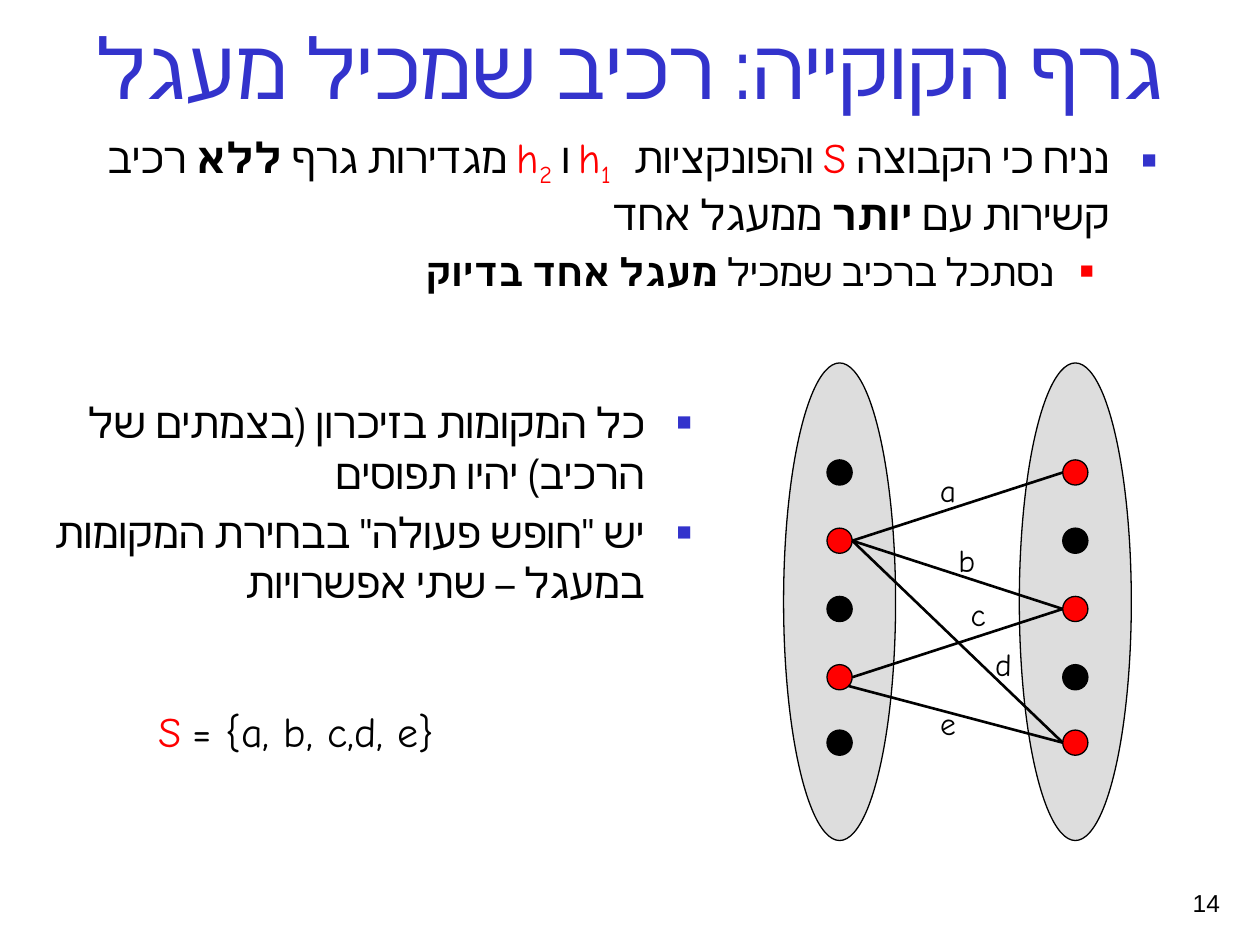
from lxml import etree
from pptx import Presentation
from pptx.dml.color import RGBColor
from pptx.enum import shapes, text
from pptx.oxml import ns
from pptx.util import Pt

BLUE = RGBColor(0x33, 0x33, 0xCC)
RED = RGBColor(0xFF, 0x00, 0x00)
BLACK = RGBColor(0x00, 0x00, 0x00)
GRAY = RGBColor(0xDD, 0xDD, 0xDD)
HEBREW, LATIN = "Arial Narrow", "Comic Neue"

PLAIN = {"name": HEBREW, "size": 24, "color": BLACK}
BOLD = {**PLAIN, "bold": True}
SYMBOL = {"name": LATIN, "size": 24, "color": RED}
SUBSCRIPT = {**SYMBOL, "baseline": -25000}
SMALL = {**PLAIN, "size": 22}
LABEL = {"name": LATIN, "size": 18, "color": BLACK}

ASSUMPTIONS = [
    (0, [("נניח כי הקבוצה ", PLAIN), ("S", SYMBOL), (" והפונקציות ", PLAIN),
         (" h", SYMBOL), ("1 ", SUBSCRIPT), ("ו ", PLAIN), ("h", SYMBOL),
         ("2", SUBSCRIPT), (" מגדירות גרף ", PLAIN), ("ללא", BOLD),
         (" רכיב קשירות עם ", PLAIN), ("יותר", BOLD), (" ממעגל אחד ", PLAIN)]),
    (1, [("נסתכל ברכיב שמכיל ", SMALL), ("מעגל אחד בדיוק", {**SMALL, "bold": True})]),
]
CONCLUSIONS = [
    (0, [("כל המקומות בזיכרון (בצמתים של הרכיב) יהיו תפוסים", PLAIN)]),
    (0, [('יש "חופש פעולה" בבחירת המקומות במעגל – שתי אפשרויות', PLAIN)]),
]
LEVELS = [(27, -27, BLUE), (58.5, -22.5, RED)]

DOT = 14.4
DOT_TOPS = [55.4, 94.4, 133.4, 172.4, 209.8]
LEFT_USED, RIGHT_USED = {1, 3}, {0, 2, 4}
EDGES = [(1, 2, 0, 0), (1, 0, 0, 0), (3, 2, 0, 0), (1, 4, 0, 0), (3, 4, -2.2, 5)]
EDGE_LABELS = [("a", 59, 57.6), ("b", 69.8, 97.9), ("d", 90.7, 157),
               ("c", 76.3, 128.9), ("e", 59, 190.8)]


def place(shape, box):
    """Set a shape's left, top, width and height from a box in points."""
    for name, value in zip(("left", "top", "width", "height"), box):
        setattr(shape, name, Pt(value))


def add_run(paragraph, words, style):
    """Append a run formatted from a style dict."""
    run = paragraph.add_run()
    run.text = words
    values = {"bold": style.get("bold", False), "name": style["name"], "size": Pt(style["size"])}
    for name, value in values.items():
        setattr(run.font, name, value)
    run.font.color.rgb = style["color"]
    properties = run._r.get_or_add_rPr()
    etree.SubElement(properties, ns.qn("a:cs"), typeface=style["name"])
    if "baseline" in style:
        properties.set("baseline", str(style["baseline"]))


def set_frame(frame, **values):
    """Apply text frame attributes, with automatic sizing off."""
    for name, value in {"auto_size": text.MSO_AUTO_SIZE.NONE, **values}.items():
        setattr(frame, name, value)


def add_text(slide, box, runs, alignment, **values):
    """Add a one-paragraph text box."""
    shape = slide.shapes.add_textbox(*map(Pt, box))
    set_frame(shape.text_frame, **{"word_wrap": True, **values})
    paragraph = shape.text_frame.paragraphs[0]
    paragraph.alignment = alignment
    for words, style in runs:
        add_run(paragraph, words, style)


def fill_title(shape, box, words):
    """Place the title placeholder and fill it."""
    place(shape, box)
    set_frame(shape.text_frame, vertical_anchor=text.MSO_ANCHOR.BOTTOM)
    paragraph = shape.text_frame.paragraphs[0]
    paragraph.alignment = text.PP_ALIGN.CENTER
    add_run(paragraph, words, {"name": HEBREW, "size": 48, "color": BLUE})


def fill_list(shape, box, items):
    """Fill a body placeholder with right-to-left square bullets."""
    place(shape, box)
    frame = shape.text_frame
    set_frame(frame, vertical_anchor=text.MSO_ANCHOR.TOP)
    for index, (level, runs) in enumerate(items):
        paragraph = frame.add_paragraph() if index else frame.paragraphs[0]
        values = {"level": level, "alignment": text.PP_ALIGN.RIGHT, "space_before": Pt(5)}
        for name, value in values.items():
            setattr(paragraph, name, value)
        margin, indent, color = LEVELS[level]
        properties = paragraph._p.get_or_add_pPr()
        for name, value in {"marL": Pt(margin), "indent": Pt(indent), "rtl": 1}.items():
            properties.set(name, str(value))
        bullet_color = etree.SubElement(properties, ns.qn("a:buClr"))
        etree.SubElement(bullet_color, ns.qn("a:srgbClr"), val=str(color))
        etree.SubElement(properties, ns.qn("a:buSzPct"), val="60000")
        etree.SubElement(properties, ns.qn("a:buFont"), typeface="Arial")
        etree.SubElement(properties, ns.qn("a:buChar"), char="■")
        for words, style in runs:
            add_run(paragraph, words, style)


def add_ellipse(slide, box, color):
    """Add a filled ellipse with a thin black outline."""
    shape = slide.shapes.add_shape(shapes.MSO_SHAPE.OVAL, *map(Pt, box))
    shape.shadow.inherit = False
    shape.fill.solid()
    shape.fill.fore_color.rgb = color
    shape.line.color.rgb = BLACK
    shape.line.width = Pt(0.75)


def add_side(slide, box, used):
    """Add one vertex set, with its used vertices in red."""
    left, top, width, height = box
    add_ellipse(slide, box, GRAY)
    for index, offset in enumerate(DOT_TOPS):
        dot_box = (left + (width - DOT) / 2, top + offset, DOT, DOT)
        add_ellipse(slide, dot_box, RED if index in used else BLACK)


def add_edge(slide, start, end):
    """Add a straight black edge between two points."""
    edge = slide.shapes.add_connector(shapes.MSO_CONNECTOR.STRAIGHT, *map(Pt, start + end))
    edge.line.color.rgb = BLACK
    edge.line.width = Pt(1.5)
    etree.SubElement(edge._element.spPr, ns.qn("a:effectLst"))


def add_graph(slide, box):
    """Draw the bipartite graph inside its box."""
    left, top, width, height = box
    side = 64
    add_side(slide, (left + width - side, top, side, height), RIGHT_USED)
    add_side(slide, (left, top, side, height), LEFT_USED)
    inset = (side + DOT) / 2
    centers = [top + offset + DOT / 2 for offset in DOT_TOPS]
    for source, target, shift_x, shift_y in EDGES:
        start = (left + inset + shift_x, centers[source] + shift_y)
        add_edge(slide, start, (left + width - inset, centers[target]))
    for letter, x, y in EDGE_LABELS:
        add_text(slide, (left + x, top + y, 69.8, 29.5), [(letter, LABEL)],
                 text.PP_ALIGN.CENTER, word_wrap=False,
                 vertical_anchor=text.MSO_ANCHOR.MIDDLE)


def build_slide(presentation):
    """Build the slide on the cuckoo graph."""
    slide = presentation.slides.add_slide(presentation.slide_layouts[3])
    title, assumptions, conclusions = slide.placeholders
    fill_title(title, (0, 8, 720, 62), "גרף הקוקייה: רכיב שמכיל מעגל")
    fill_list(assumptions, (18.7, 71.3, 649.5, 99.4), ASSUMPTIONS)
    add_graph(slide, (447.8, 207.4, 198.7, 272.9))
    fill_list(conclusions, (13.7, 223.2, 388.8, 99.4), CONCLUSIONS)
    add_text(slide, (83.5, 399.6, 238.3, 36),
             [("S", SYMBOL), (" ", {**SYMBOL, "size": 18}),
              ("= {a, b, c,d, e}", {**LABEL, "size": 24})], text.PP_ALIGN.LEFT)
    add_text(slide, (554.4, 491.8, 149.8, 36),
             [("14", {"name": "Arial", "size": 14, "color": BLACK})],
             text.PP_ALIGN.RIGHT, vertical_anchor=text.MSO_ANCHOR.BOTTOM)


def main():
    """Create and save the presentation."""
    presentation = Presentation()
    presentation.slide_width, presentation.slide_height = Pt(720), Pt(540)
    build_slide(presentation)
    presentation.save("out.pptx")


if __name__ == "__main__":
    main()
